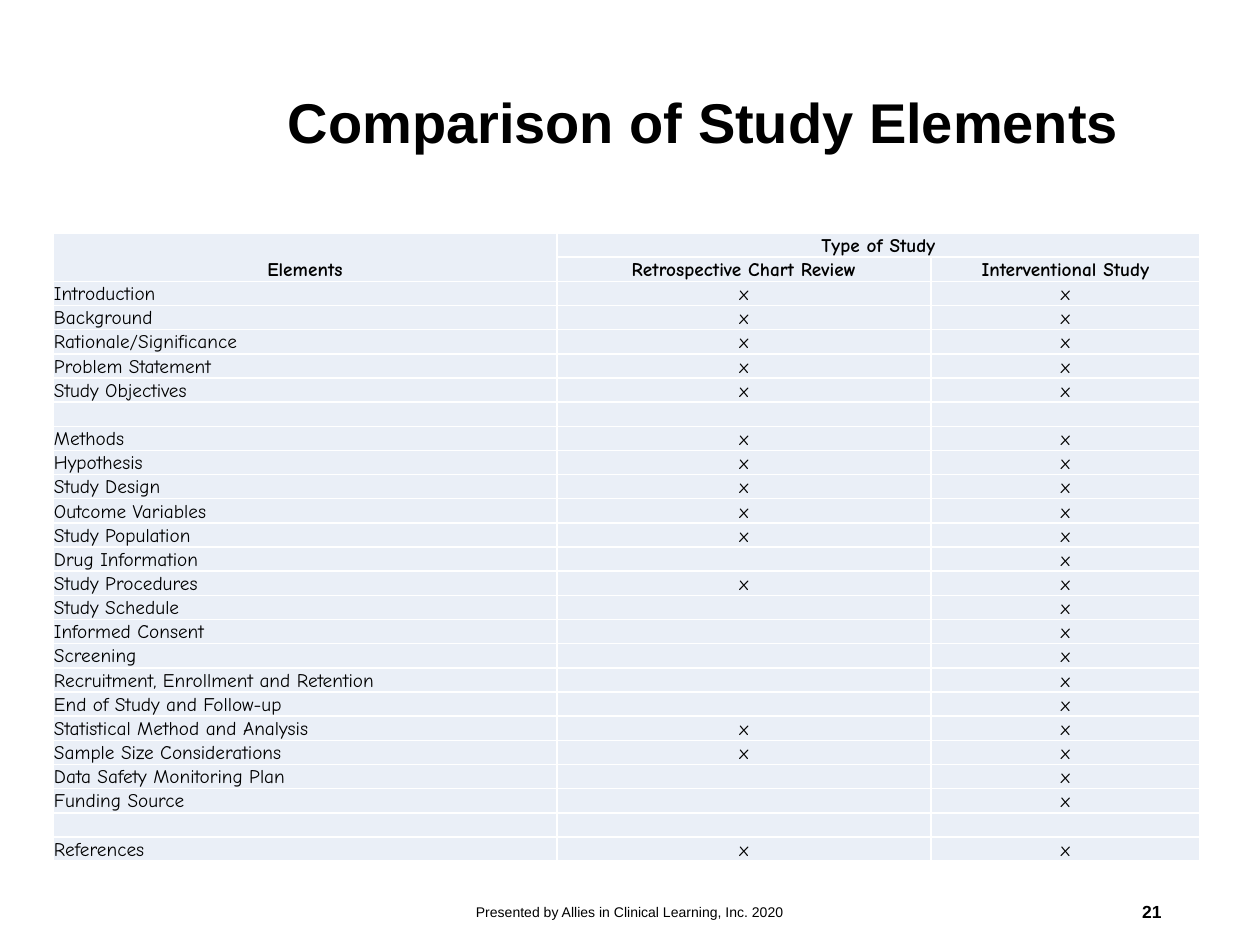
from lxml import etree
from pptx import Presentation
from pptx.dml.color import RGBColor
from pptx.enum.text import MSO_ANCHOR, PP_ALIGN
from pptx.oxml.ns import qn
from pptx.text.text import Font
from pptx.util import Emu, Pt

LEFT, CENTER, RIGHT = PP_ALIGN.LEFT, PP_ALIGN.CENTER, PP_ALIGN.RIGHT
MIDDLE, BOTTOM = MSO_ANCHOR.MIDDLE, MSO_ANCHOR.BOTTOM
COLORS = {"text": "000000", "cell": "EAEFF7", "border": "FFFFFF"}
BORDER_WIDTH = Pt(1)
PX_PER_INCH = 126
SLIDE_SIZE = (1260, 945)

COLUMN_WIDTHS = (504, 374, 269)
ROW_HEIGHT = 23
BOTH, INTERVENTIONAL, NEITHER = ("x", "x"), ("", "x"), ("", "")
HEADERS = [
    ("Elements", "Type of Study", ""),
    ("", "Retrospective Chart Review", "Interventional Study"),
]
ELEMENTS = [
    ("Introduction", BOTH),
    ("Background", BOTH),
    ("Rationale/Significance", BOTH),
    ("Problem Statement", BOTH),
    ("Study Objectives", BOTH),
    ("", NEITHER),
    ("Methods", BOTH),
    ("Hypothesis", BOTH),
    ("Study Design", BOTH),
    ("Outcome Variables", BOTH),
    ("Study Population", BOTH),
    ("Drug Information", INTERVENTIONAL),
    ("Study Procedures", BOTH),
    ("Study Schedule", INTERVENTIONAL),
    ("Informed Consent", INTERVENTIONAL),
    ("Screening", INTERVENTIONAL),
    ("Recruitment, Enrollment and Retention", INTERVENTIONAL),
    ("End of Study and Follow-up", INTERVENTIONAL),
    ("Statistical Method and Analysis", BOTH),
    ("Sample Size Considerations", BOTH),
    ("Data Safety Monitoring Plan", INTERVENTIONAL),
    ("Funding Source", INTERVENTIONAL),
    ("", NEITHER),
    ("References", BOTH),
]


def px(length):
    return Emu(round(length * 914400 / PX_PER_INCH))


def set_all(target, values):
    for name, value in values.items():
        setattr(target, name, value)


class StudySlide:
    """Holds the text styles and the slide being filled."""

    title_font = {"name": "Arial", "size": Pt(32), "bold": True}
    footer_font = {"name": "Arial", "size": Pt(8), "bold": False}
    number_font = {"name": "Arial", "size": Pt(10), "bold": True}
    header_font = {"name": "Comic Neue", "size": Pt(11), "bold": True}
    body_font = {**header_font, "bold": False}
    cell_format = {
        "vertical_anchor": BOTTOM,
        "margin_left": px(1),
        "margin_right": px(1),
        "margin_top": px(1),
        "margin_bottom": 0,
    }

    def __init__(self, presentation):
        self.slide = presentation.slides.add_slide(presentation.slide_layouts[5])

    def add_text(self, text_frame, text, font, align):
        paragraph = text_frame.paragraphs[0]
        paragraph.alignment = align
        if text:
            run = paragraph.add_run()
            run.text = text
            target = run.font
        else:
            # An empty cell takes its line height from the end-of-paragraph mark.
            target = Font(paragraph._p.get_or_add_endParaRPr())
        set_all(target, font)
        target.color.rgb = RGBColor.from_string(COLORS["text"])
        return paragraph

    def place(self, shape, box):
        names = ("left", "top", "width", "height")
        set_all(shape, dict(zip(names, map(px, box))))

    def title(self, text, box):
        shape = self.slide.shapes.title
        self.place(shape, box)
        set_all(shape.text_frame, {"vertical_anchor": MIDDLE, "word_wrap": True})
        self.add_text(shape.text_frame, text, self.title_font, LEFT).line_spacing = 0.9

    def text_box(self, text, box, font, align):
        shape = self.slide.shapes.add_textbox(*map(px, box))
        set_all(shape.text_frame, {"vertical_anchor": MIDDLE, "word_wrap": True})
        self.add_text(shape.text_frame, text, font, align)

    def borders(self, cell):
        properties = cell._tc.get_or_add_tcPr()
        for index, side in enumerate(("lnL", "lnR", "lnT", "lnB")):
            line = etree.Element(qn(f"a:{side}"), w=str(BORDER_WIDTH))
            fill = etree.SubElement(line, qn("a:solidFill"))
            etree.SubElement(fill, qn("a:srgbClr"), val=COLORS["border"])
            properties.insert(index, line)

    def cell(self, cell, text, font, align):
        set_all(cell, self.cell_format)
        cell.fill.solid()
        cell.fill.fore_color.rgb = RGBColor.from_string(COLORS["cell"])
        self.borders(cell)
        self.add_text(cell.text_frame, text, font, align)

    def table(self, left, top):
        rows = HEADERS + [(name, *marks) for name, marks in ELEMENTS]
        size = (sum(COLUMN_WIDTHS), ROW_HEIGHT * len(rows))
        frame = self.slide.shapes.add_table(
            len(rows), len(COLUMN_WIDTHS), *map(px, (left, top, *size)))
        table = frame.table
        set_all(table, {"first_row": False, "horz_banding": False})
        for column, width in zip(table.columns, COLUMN_WIDTHS):
            column.width = px(width)
        for row_index, texts in enumerate(rows):
            table.rows[row_index].height = px(ROW_HEIGHT)
            is_header = row_index < len(HEADERS)
            font = self.header_font if is_header else self.body_font
            for column_index, text in enumerate(texts):
                align = CENTER if is_header or column_index else LEFT
                self.cell(table.cell(row_index, column_index), text, font, align)
        table.cell(0, 0).merge(table.cell(1, 0))
        table.cell(0, 1).merge(table.cell(0, 2))


def main():
    presentation = Presentation()
    presentation.slide_width, presentation.slide_height = map(px, SLIDE_SIZE)
    slide = StudySlide(presentation)
    slide.title("Comparison of Study Elements", (275, 34, 900, 183))
    slide.text_box("Presented by Allies in Clinical Learning, Inc. 2020",
                   (417, 887, 426, 50), slide.footer_font, CENTER)
    slide.text_box("21", (890, 887, 284, 50), slide.number_font, RIGHT)
    slide.table(53, 233)
    presentation.save("out.pptx")


if __name__ == "__main__":
    main()
